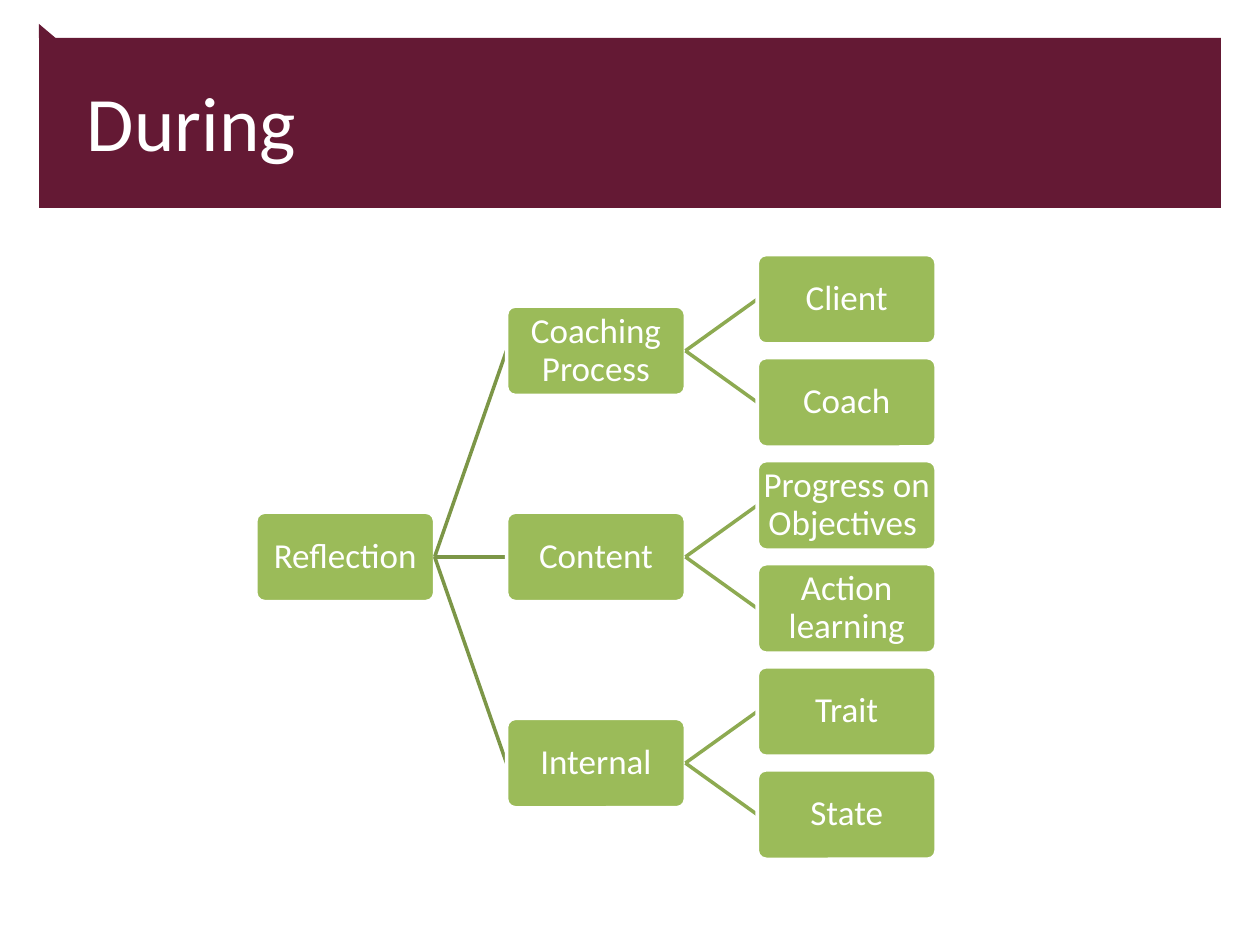
from lxml import etree
from pptx import Presentation
from pptx.dml.color import RGBColor
from pptx.enum.shapes import MSO_CONNECTOR, MSO_SHAPE
from pptx.enum.text import MSO_ANCHOR, PP_ALIGN
from pptx.oxml.ns import qn
from pptx.util import Inches, Pt

RECT = MSO_SHAPE.RECTANGLE
ROUNDED = MSO_SHAPE.ROUNDED_RECTANGLE
TRIANGLE = MSO_SHAPE.RIGHT_TRIANGLE
STRAIGHT = MSO_CONNECTOR.STRAIGHT
MIDDLE = MSO_ANCHOR.MIDDLE
LEFT, CENTER = PP_ALIGN.LEFT, PP_ALIGN.CENTER

FONT = "Calibri"
WHITE, MAROON, GREEN = "FFFFFF", "641934", "9BBB59"
ROOT_LINE, BRANCH_LINE = "7C9647", "8DAA51"
BOX_W, BOX_H = 1.42, 0.71

ROOT = "Reflection"
BRANCHES = {
    "Coaching Process": ["Client", "Coach"],
    "Content": ["Progress on Objectives ", "Action learning"],
    "Internal": ["Trait", "State"],
}


def color(hex_value):
    return RGBColor.from_string(hex_value)


def set_text(shape, text, size, align):
    tf = shape.text_frame
    tf.text = text
    tf.word_wrap = True
    tf.vertical_anchor = MIDDLE
    p = tf.paragraphs[0]
    p.alignment = align
    font = p.runs[0].font
    font.name, font.size = FONT, Pt(size)
    font.color.rgb = color(WHITE)
    return tf


def add_filled(s, kind, left, top, width, height, fill):
    shape = s.shapes.add_shape(
        kind, Inches(left), Inches(top), Inches(width), Inches(height))
    shape.shadow.inherit = False
    shape.fill.solid()
    shape.fill.fore_color.rgb = color(fill)
    shape.line.fill.background()
    return shape


def add_header(s, left, top, width, height):
    add_filled(s, RECT, left, top, width, height, MAROON)
    add_filled(s, TRIANGLE, left, top - 0.11, 0.13, 0.11, MAROON)
    title = s.shapes.title
    title.left, title.top = Inches(left + 0.28), Inches(top - 0.01)
    title.width, title.height = Inches(width - 0.32), Inches(height - 0.01)
    set_text(title, "During", 44, LEFT)
    s.shapes.element.append(title.element)


def add_box(s, text, left, top):
    box = add_filled(s, ROUNDED, left, top, BOX_W, BOX_H, GREEN)
    box.adjustments[0] = 0.1
    box.line.color.rgb = color(WHITE)
    box.line.width = Pt(2)
    tf = set_text(box, text, 20, CENTER)
    tf.margin_left = tf.margin_right = Inches(0.01)
    tf.margin_top = tf.margin_bottom = Inches(0.01)
    tf.paragraphs[0].line_spacing = 0.9
    return box


def add_link(s, parent, child, line_color):
    link = s.shapes.add_connector(STRAIGHT, 0, 0, 0, 0)
    link.begin_connect(parent, 3)
    link.end_connect(child, 1)
    link.line.color.rgb = color(line_color)
    link.line.width = Pt(2)
    etree.SubElement(link.element.spPr, qn("a:effectLst"))
    s.shapes.element.append(child.element)


def add_tree(s, left, top, width, height):
    leaf_count = sum(len(leaves) for leaves in BRANCHES.values())
    row_step = (height - BOX_H) / (leaf_count - 1)
    column_step = (width - BOX_W) / 2
    root = add_box(s, ROOT, left, top + (height - BOX_H) / 2)
    row = 0
    for branch_text, leaves in BRANCHES.items():
        branch_row = row + (len(leaves) - 1) / 2
        branch = add_box(s, branch_text, left + column_step,
                         top + branch_row * row_step)
        add_link(s, root, branch, ROOT_LINE)
        for leaf_text in leaves:
            leaf = add_box(s, leaf_text, left + 2 * column_step,
                           top + row * row_step)
            add_link(s, branch, leaf, BRANCH_LINE)
            row += 1


def main():
    prs = Presentation()
    prs.slide_width, prs.slide_height = Inches(10), Inches(7.5)
    s = prs.slides.add_slide(prs.slide_layouts[5])
    add_header(s, 0.31, 0.3, 9.38, 1.35)
    add_tree(s, 2.03, 2.02, 5.4, 4.8)
    prs.save("out.pptx")


if __name__ == "__main__":
    main()
